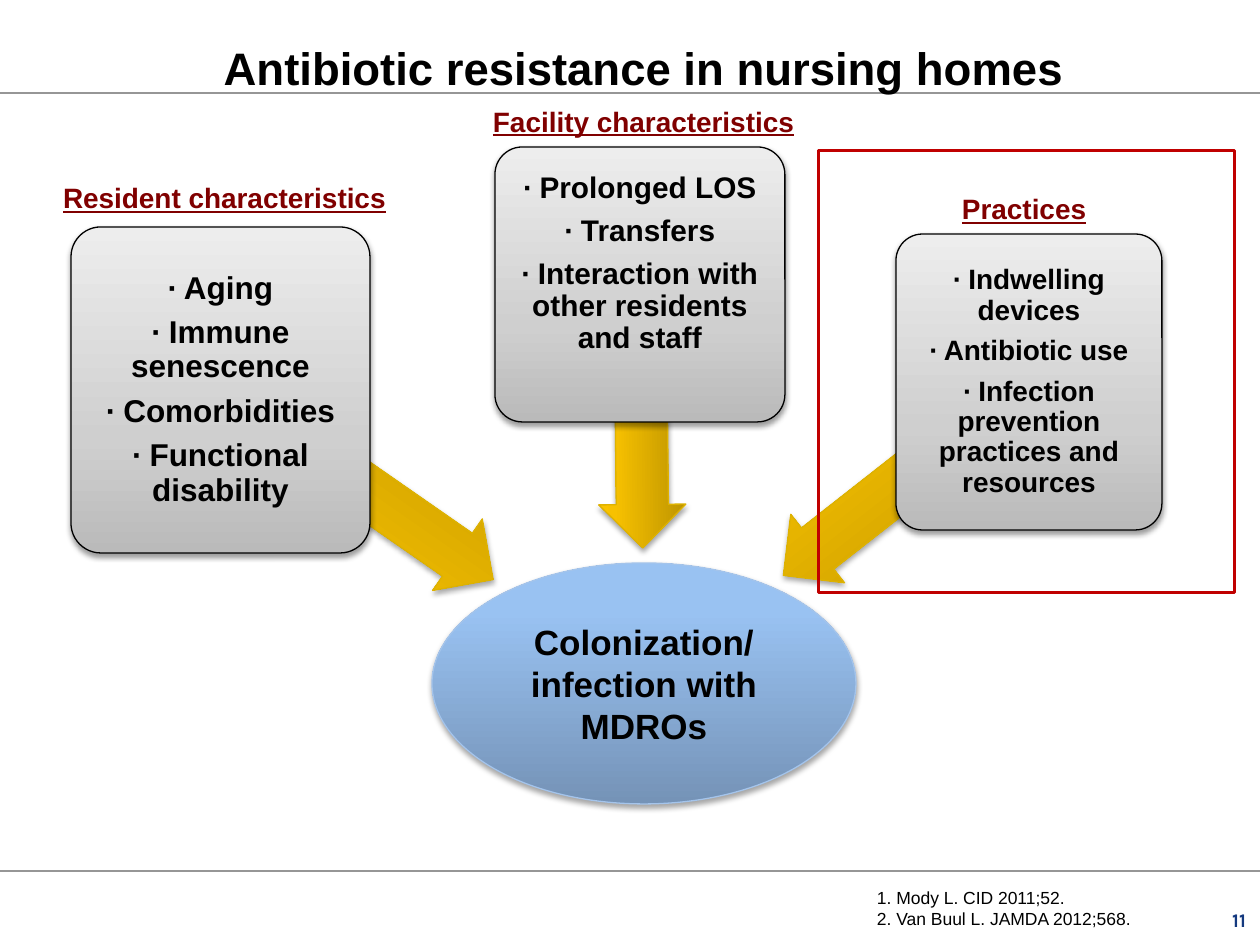
"""Build a slide on the drivers of antibiotic resistance in nursing homes."""
from lxml.etree import SubElement
from pptx import Presentation
from pptx.dml.color import RGBColor
from pptx.enum.shapes import MSO_CONNECTOR, MSO_SHAPE
from pptx.enum.text import MSO_ANCHOR as Anchor, PP_ALIGN as Align
from pptx.oxml import parse_xml
from pptx.oxml.ns import nsdecls, qn
from pptx.util import Inches, Pt

PX = 7257
GOLD = [(0, "BC9300"), (80, "F7C100"), (100, "FDC600")]
GREY = [(0, "BABABA"), (35, "CFCFCF"), (100, "EDEDED")]
BLUE = [(0, "7593B7"), (80, "99C2F2"), (100, "99C2F4")]


def write(shape, texts, size, margins, color="000000", align=Align.CENTER,
          anchor=Anchor.MIDDLE, spacing=None, before=0, **font):
    frame = shape.text_frame
    frame.text = "\n".join(texts)
    sides = zip(("left", "top", "right", "bottom"), margins)
    settings = {f"margin_{side}": margin * PX for side, margin in sides}
    for name, value in {**settings, "word_wrap": True, "vertical_anchor": anchor}.items():
        setattr(frame, name, value)
    for index, paragraph in enumerate(frame.paragraphs):
        paragraph.alignment = align
        paragraph.line_spacing = spacing
        paragraph.space_before = Pt(before if index else 0)
        for name, value in {"name": "Arial", "bold": True, "size": Pt(size), **font}.items():
            setattr(paragraph.font, name, value)
        paragraph.font.color.rgb = RGBColor.from_string(color)


def add_shaded(kind, box, stops, outline, opacity):
    shape = slide.shapes.add_shape(kind, *[value * PX for value in box])
    shape.fill.gradient()
    shape.fill.gradient_angle = 90
    stop_list = shape._element.spPr.find(qn("a:gradFill")).find(qn("a:gsLst"))
    stop_list.clear()
    for position, color in stops:
        stop = SubElement(stop_list, qn("a:gs"), pos=str(position * 1000))
        SubElement(stop, qn("a:srgbClr"), val=color)
    shape.line.color.rgb = RGBColor.from_string(outline)
    shape.line.width = Pt(0.75)
    shape._element.spPr.append(parse_xml(
        f'<a:effectLst {nsdecls("a")}><a:outerShdw blurRad="40000" dist="22000" '
        f'dir="5400000" rotWithShape="0"><a:srgbClr val="000000">'
        f'<a:alpha val="{opacity * 1000}"/></a:srgbClr></a:outerShdw></a:effectLst>'))
    return shape


presentation = Presentation()
presentation.slide_width, presentation.slide_height = Inches(10), Inches(7.5)
slide = presentation.slides.add_slide(presentation.slide_layouts[6])

for y in (871, 93):
    rule = slide.shapes.add_connector(MSO_CONNECTOR.STRAIGHT, 0, y * PX, 1260 * PX, y * PX)
    rule.line.color.rgb = RGBColor.from_string("969696")
    rule.line.width = Pt(1)
    SubElement(rule._element.spPr, qn("a:effectLst"))

outcome = add_shaded(MSO_SHAPE.OVAL, (432, 563, 424, 241), BLUE, "A4C4EB", 35)
write(outcome, ["Colonization/", "infection with MDROs"], 20, (1, 1, 1, 1))

causes = [
    ("Resident characteristics", (50, 175, 370, 47), (190, 441, 333, 87), 214.8,
     (71, 227, 299, 326), 18, 5, 5,
     ["Aging", "Immune senescence", "Comorbidities", "Functional disability"]),
    ("Facility characteristics", (480, 98, 384, 47), (510, 373, 263, 87), 269.4,
     (495, 147, 290, 275), 17, 5, 46,
     ["Prolonged LOS", "Transfers", "Interaction with other residents and staff"]),
    ("Practices", (949, 186, 285, 47), (750, 435, 314, 87), 321.9,
     (896, 234, 266, 296), 16, 4, 4,
     ["Indwelling devices", "Antibiotic use",
      "Infection prevention practices and resources"]),
]
for heading, heading_box, arrow_box, angle, card_box, size, margin, bottom, items in causes:
    arrow = add_shaded(MSO_SHAPE.LEFT_ARROW, arrow_box, GOLD, "DEB200", 35)
    arrow.adjustments[0], arrow.adjustments[1] = 0.6, 0.5
    arrow.rotation = angle
    card = add_shaded(MSO_SHAPE.ROUNDED_RECTANGLE, card_box, GREY, "000000", 38)
    card.adjustments[0] = 0.1
    write(card, [f"∙ {item}" for item in items], size, (margin, margin, margin, bottom),
          spacing=0.9, before=6)
    label = slide.shapes.add_textbox(*[value * PX for value in heading_box])
    write(label, [heading], 16, (13, 6, 13, 6), "800000", Align.LEFT, Anchor.TOP,
          underline=True)

title = slide.shapes.add_textbox(57 * PX, 18 * PX, 1174 * PX, 77 * PX)
write(title, ["Antibiotic resistance in nursing homes"], 26, (0, 0, 0, 0),
      anchor=Anchor.BOTTOM)

references = slide.shapes.add_textbox(864 * PX, 881 * PX, 396 * PX, 60 * PX)
write(references, ["1. Mody L. CID 2011;52.", "2. Van Buul L. JAMDA 2012;568."], 10,
      (13, 6, 13, 6), align=Align.LEFT, anchor=Anchor.TOP, bold=False)

page_number = slide.shapes.add_textbox(1226 * PX, 908 * PX, 20 * PX, 23 * PX)
write(page_number, ["11"], 11, (0, 0, 0, 0), "14397F", Align.RIGHT, Anchor.BOTTOM,
      name="Karla")

highlight = slide.shapes.add_shape(MSO_SHAPE.RECTANGLE, 819 * PX, 151 * PX, 416 * PX, 442 * PX)
highlight.shadow.inherit = False
highlight.fill.background()
highlight.line.color.rgb = RGBColor.from_string("C00000")
highlight.line.width = Pt(1.75)

presentation.save("out.pptx")
